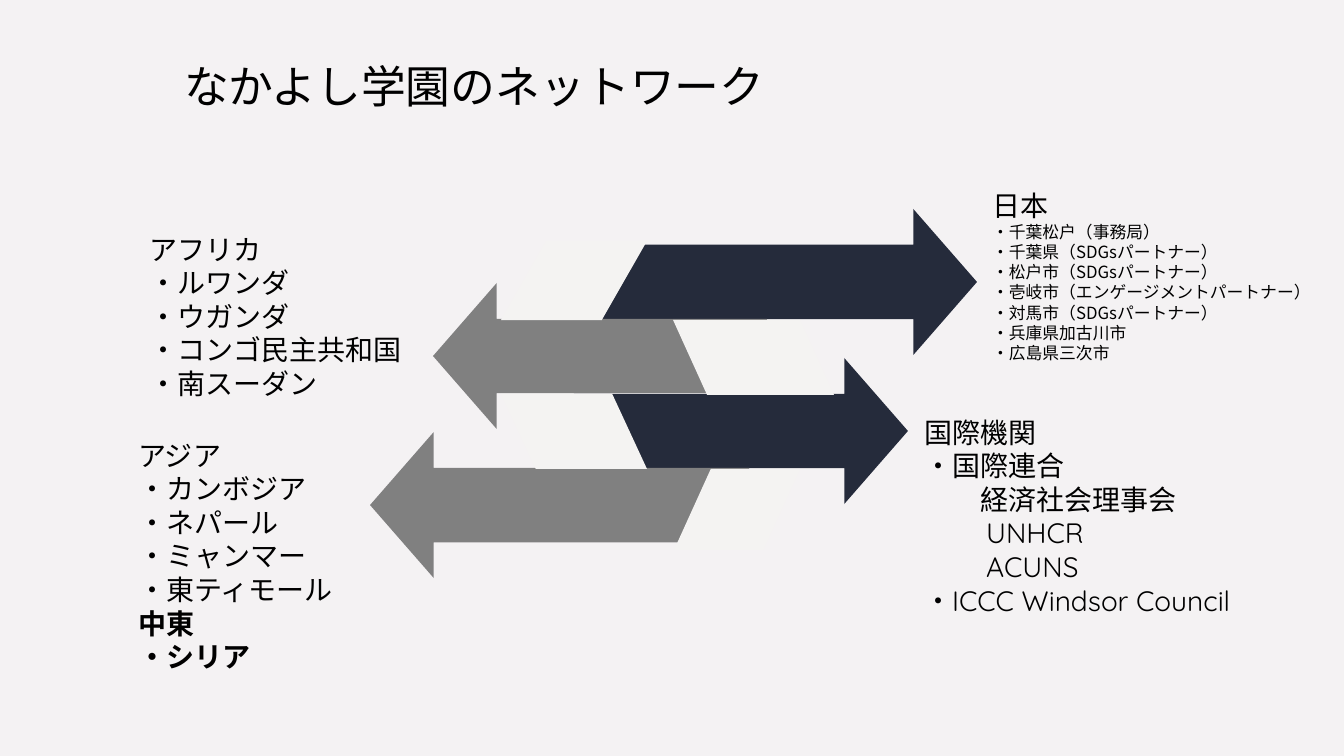
from dataclasses import dataclass

from lxml.etree import SubElement
from pptx import Presentation
from pptx.dml.color import RGBColor
from pptx.enum.shapes import MSO_SHAPE
from pptx.enum.text import MSO_ANCHOR, MSO_AUTO_SIZE, PP_ALIGN
from pptx.oxml.ns import qn
from pptx.util import Emu, Pt

EMU_PER_PX = 914400 / 100.8


@dataclass(frozen=True)
class Theme:
    background: str = "F4F2F3"
    cover: str = "F4F3F2"
    navy: str = "252B3B"
    gray: str = "808080"
    text: str = "000000"
    latin: str = "Quicksand"
    japanese: str = "Noto Sans CJK JP"
    title_size: int = 32
    list_size: int = 20
    detail_size: int = 12
    line_height: float = 1.2


THEME = Theme()

AFRICA = ["アフリカ", "・ルワンダ", "・ウガンダ", "・コンゴ民主共和国", "・南スーダン"]
ASIA = ["アジア", "・カンボジア", "・ネパール", "・ミャンマー", "・東ティモール"]
MIDDLE_EAST = ["中東", "・シリア"]
JAPAN_PARTNERS = [
    "・千葉松戸（事務局）",
    "・千葉県（SDGsパートナー）",
    "・松戸市（SDGsパートナー）",
    "・壱岐市（エンゲージメントパートナー）",
    "・対馬市（SDGsパートナー）",
    "・兵庫県加古川市",
    "・広島県三次市",
]


def px(length):
    return Emu(round(length * EMU_PER_PX))


def place(shape, left, top, width, height):
    shape.left, shape.top = px(left), px(top)
    shape.width, shape.height = px(width), px(height)


def add_line(paragraph, text, size=THEME.list_size, bold=False, indent=0, latin=THEME.latin):
    """Write one unbulleted line with a fixed line height."""
    paragraph.alignment = PP_ALIGN.LEFT
    paragraph.line_spacing = Pt(size * THEME.line_height)
    paragraph.space_before = paragraph.space_after = Pt(0)
    properties = paragraph._p.get_or_add_pPr()
    properties.set("marL", str(px(indent)))
    properties.set("indent", "0")
    SubElement(properties, qn("a:buNone"))
    run = paragraph.add_run()
    run.text = text
    font = run.font
    font.name, font.size, font.bold = latin, Pt(size), bold
    font.color.rgb = RGBColor.from_string(THEME.text)
    SubElement(run._r.get_or_add_rPr(), qn("a:ea"), typeface=THEME.japanese)


def fill_placeholder(placeholder, box, lines):
    """Move a placeholder and write lines given as (text, add_line options)."""
    place(placeholder, *box)
    frame = placeholder.text_frame
    frame.word_wrap = True
    frame.vertical_anchor = MSO_ANCHOR.TOP
    frame.auto_size = MSO_AUTO_SIZE.SHAPE_TO_FIT_TEXT
    for number, (text, options) in enumerate(lines):
        paragraph = frame.add_paragraph() if number else frame.paragraphs[0]
        add_line(paragraph, text, **options)


def styled(lines, **options):
    return [(text, options) for text in lines]


def add_block(group, preset, box, color, adjustments):
    block = group.shapes.add_shape(preset, *map(px, box))
    for number, value in enumerate(adjustments):
        block.adjustments[number] = value
    block.fill.solid()
    block.fill.fore_color.rgb = RGBColor.from_string(color)
    block.line.fill.background()
    block.shadow.inherit = False
    return block


def add_arrow(group, row, left, width):
    """Odd rows point left in gray, even rows point right in navy."""
    points_left = row % 2 == 1
    box = (left, 209 + row * 149 // 2, width, 146)
    color = THEME.gray if points_left else THEME.navy
    arrow = add_block(group, MSO_SHAPE.RIGHT_ARROW, box, color, (0.51, 0.436))
    arrow.rotation = 180 if points_left else 0


def add_cover(group, box, slant, flipped):
    """Cut the tail of an arrow at a slant."""
    cover = add_block(group, MSO_SHAPE.PARALLELOGRAM, box, THEME.cover, (slant,))
    if flipped:
        cover._element.spPr.find(qn("a:xfrm")).set("flipV", "1")


def add_arrows(slide):
    group = slide.shapes.add_group_shape()
    for row, (left, width) in enumerate([(586, 391), (433, 334), (574, 334), (370, 379)]):
        add_arrow(group, row, left, width)
    add_cover(group, (501, 241, 146, 79), 0.572, False)
    add_cover(group, (501, 394, 146, 75), 0.463, True)
    add_cover(group, (673, 320, 161, 75), 0.454, True)
    add_cover(group, (674, 469, 126, 81), 0.454, False)


def main():
    deck = Presentation()
    deck.slide_width, deck.slide_height = px(1344), px(756)
    slide = deck.slides.add_slide(deck.slide_layouts.get_by_name("Comparison"))
    slide.background.fill.solid()
    slide.background.fill.fore_color.rgb = RGBColor.from_string(THEME.background)

    title, africa, asia, japan, international = list(slide.placeholders)
    fill_placeholder(title, (174, 54, 822, 65),
                     styled(["なかよし学園のネットワーク"], size=THEME.title_size))
    fill_placeholder(japan, (982, 183, 348, 207),
                     styled(["日本"])
                     + styled(JAPAN_PARTNERS, size=THEME.detail_size, latin=THEME.japanese))
    fill_placeholder(asia, (128, 433, 429, 248),
                     styled(ASIA) + styled(MIDDLE_EAST, bold=True))
    fill_placeholder(africa, (139, 227, 342, 179), styled(AFRICA))
    fill_placeholder(international, (914, 410, 414, 214),
                     styled(["国際機関", "・国際連合"])
                     + styled(["経済社会理事会"], indent=56)
                     + styled(["UNHCR", "ACUNS"], indent=62)
                     + styled(["・ICCC Windsor Council"]))
    add_arrows(slide)
    deck.save("out.pptx")


if __name__ == "__main__":
    main()
